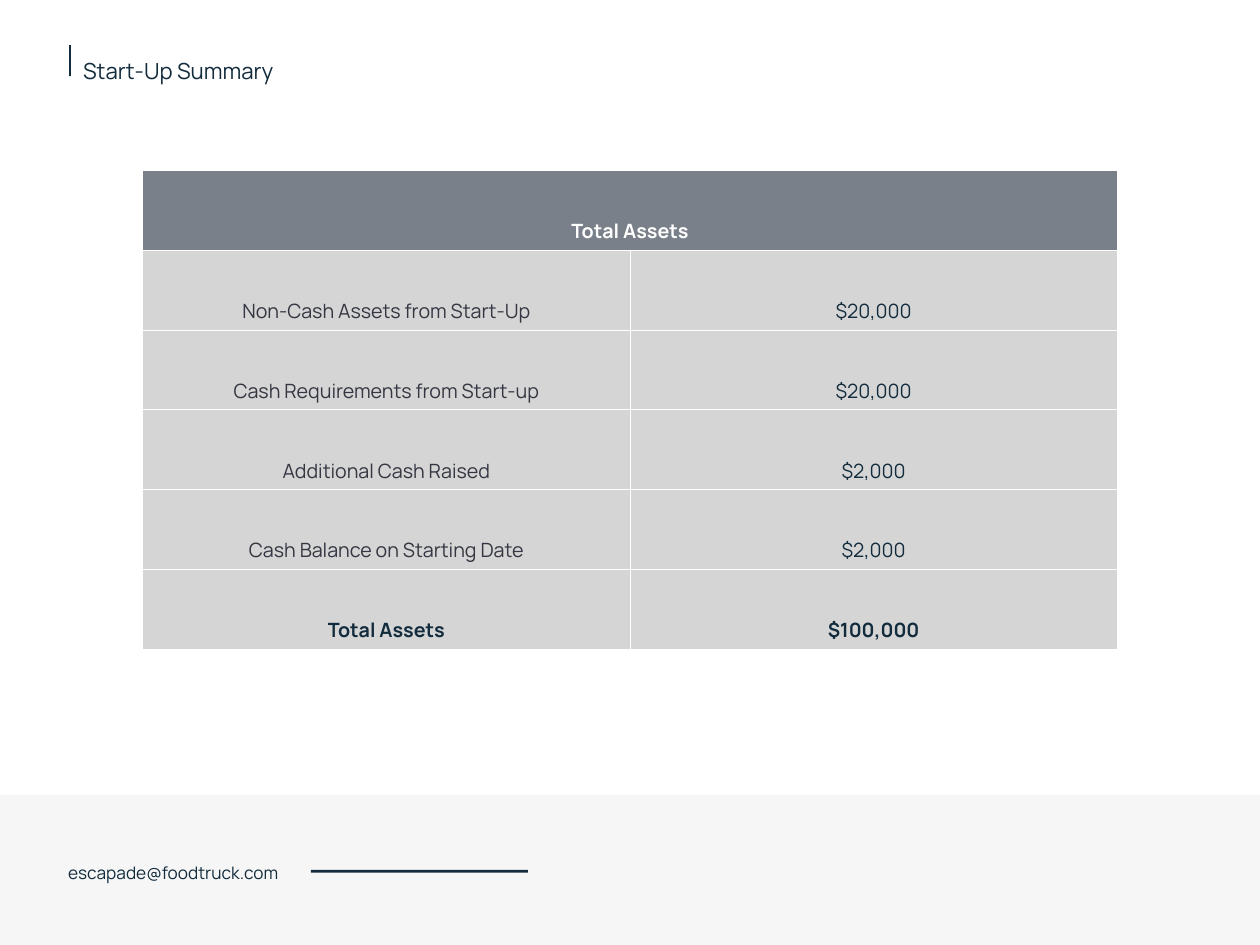
from lxml.etree import SubElement
from pptx import Presentation
from pptx.dml.color import RGBColor
from pptx.enum.shapes import MSO_SHAPE as Shape
from pptx.enum.text import MSO_ANCHOR as Anchor, PP_ALIGN as Align
from pptx.oxml.ns import qn
from pptx.util import Pt

NAVY = RGBColor(0x12, 0x2C, 0x3D)
CHARCOAL = RGBColor(0x34, 0x37, 0x42)
SLATE = RGBColor(0x79, 0x80, 0x89)
SILVER = RGBColor(0xD5, 0xD5, 0xD5)
GRAY = RGBColor(0x5E, 0x5E, 0x5E)
WHITE = RGBColor(0xFF, 0xFF, 0xFF)
FONT = "Manrope"
ASSETS = [
    ("Non-Cash Assets from Start-Up", "$20,000"),
    ("Cash Requirements from Start-up", "$20,000"),
    ("Additional Cash Raised", "$2,000"),
    ("Cash Balance on Starting Date", "$2,000"),
    ("Total Assets", "$100,000"),
]


def add_bar(page, left, top, width, height, color):
    """Add a plain filled rectangle without outline or shadow."""
    bar = page.shapes.add_shape(Shape.RECTANGLE, Pt(left), Pt(top), Pt(width), Pt(height))
    bar.fill.solid()
    bar.fill.fore_color.rgb = color
    bar.line.fill.background()
    bar.shadow.inherit = False
    return bar


def write(frame, text, size, color, spacing, align=Align.LEFT, bold=False):
    """Write one formatted paragraph into a text frame."""
    para = frame.paragraphs[0]
    para.alignment = align
    para.line_spacing = spacing
    para.space_before = Pt(0)
    span = para.add_run()
    span.text = text
    span.font.name = FONT
    span.font.size = Pt(size)
    span.font.bold = bold
    span.font.color.rgb = color


def set_insets(frame, inset):
    """Give a text frame equal insets, top anchoring and wrapping."""
    frame.margin_left = frame.margin_right = Pt(inset)
    frame.margin_top = frame.margin_bottom = Pt(inset)
    frame.vertical_anchor = Anchor.TOP
    frame.word_wrap = True


def add_heading(page, left, top, width, height):
    """Place the title with its upright accent bar."""
    add_bar(page, left, top, 1.5, 25.2, NAVY)
    title = page.shapes.title
    title.left, title.top = Pt(left + 9.3), Pt(top - 2.9)
    title.width, title.height = Pt(width - 9.3), Pt(height)
    set_insets(title.text_frame, 2)
    write(title.text_frame, "Start-Up Summary", 18, NAVY, 1.5)


def style_cell(cell, fill):
    """Give a cell white borders, a fill, even margins and middle anchoring."""
    props = cell._tc.get_or_add_tcPr()
    for side in ("a:lnL", "a:lnR", "a:lnT", "a:lnB"):
        line = SubElement(props, qn(side), w=str(Pt(0.75)))
        solid = SubElement(line, qn("a:solidFill"))
        SubElement(solid, qn("a:srgbClr"), val=str(WHITE))
    cell.fill.solid()
    cell.fill.fore_color.rgb = fill
    cell.margin_left = cell.margin_right = Pt(4)
    cell.margin_top = cell.margin_bottom = Pt(4)
    cell.vertical_anchor = Anchor.MIDDLE


def add_assets_table(page, left, top, width, height):
    """Place the asset table with a merged header and a bold total row."""
    rows = len(ASSETS) + 1
    table = page.shapes.add_table(rows, 2, Pt(left), Pt(top), Pt(width), Pt(height)).table
    for column in table.columns:
        column.width = Pt(width / 2)
    for row in table.rows:
        row.height = Pt(height / rows)
    for index, cell in enumerate(table.iter_cells()):
        style_cell(cell, SLATE if index < 2 else SILVER)
    header = table.cell(0, 0)
    header.merge(table.cell(0, 1))
    write(header.text_frame, "Total Assets", 16, WHITE, 2.56, Align.CENTER, True)
    for number, (label, amount) in enumerate(ASSETS, 1):
        total = number == len(ASSETS)
        label_color = NAVY if total else CHARCOAL
        for column, (text, color) in enumerate([(label, label_color), (amount, NAVY)]):
            frame = table.cell(number, column).text_frame
            write(frame, text, 16, color, 2.56, Align.CENTER, total)


def add_footer(page, left, top, width, height):
    """Place the pale footer band with the contact address and a rule."""
    band = add_bar(page, left, top, width, height, GRAY)
    color = band.fill._xPr.find(qn("a:solidFill"))[0]
    SubElement(color, qn("a:alpha"), val="5000")
    contact = page.shapes.add_textbox(Pt(left + 54), Pt(top + 49.7), Pt(255), Pt(31))
    set_insets(contact.text_frame, 2)
    write(contact.text_frame, "escapade@foodtruck.com", 14, NAVY, 1.2)
    add_bar(page, left + 253.4, top + 61.2, 176.4, 2.2, NAVY)


def main():
    """Build the start-up summary slide."""
    deck = Presentation()
    deck.slide_width, deck.slide_height = Pt(1024), Pt(768)
    page = deck.slides.add_slide(deck.slide_layouts[5])
    add_footer(page, -0.7, 645.8, 1024.7, 124.6)
    add_heading(page, 56.2, 36.7, 191.5, 31)
    add_assets_table(page, 116, 138.6, 792, 388.8)
    deck.save("out.pptx")


if __name__ == "__main__":
    main()
